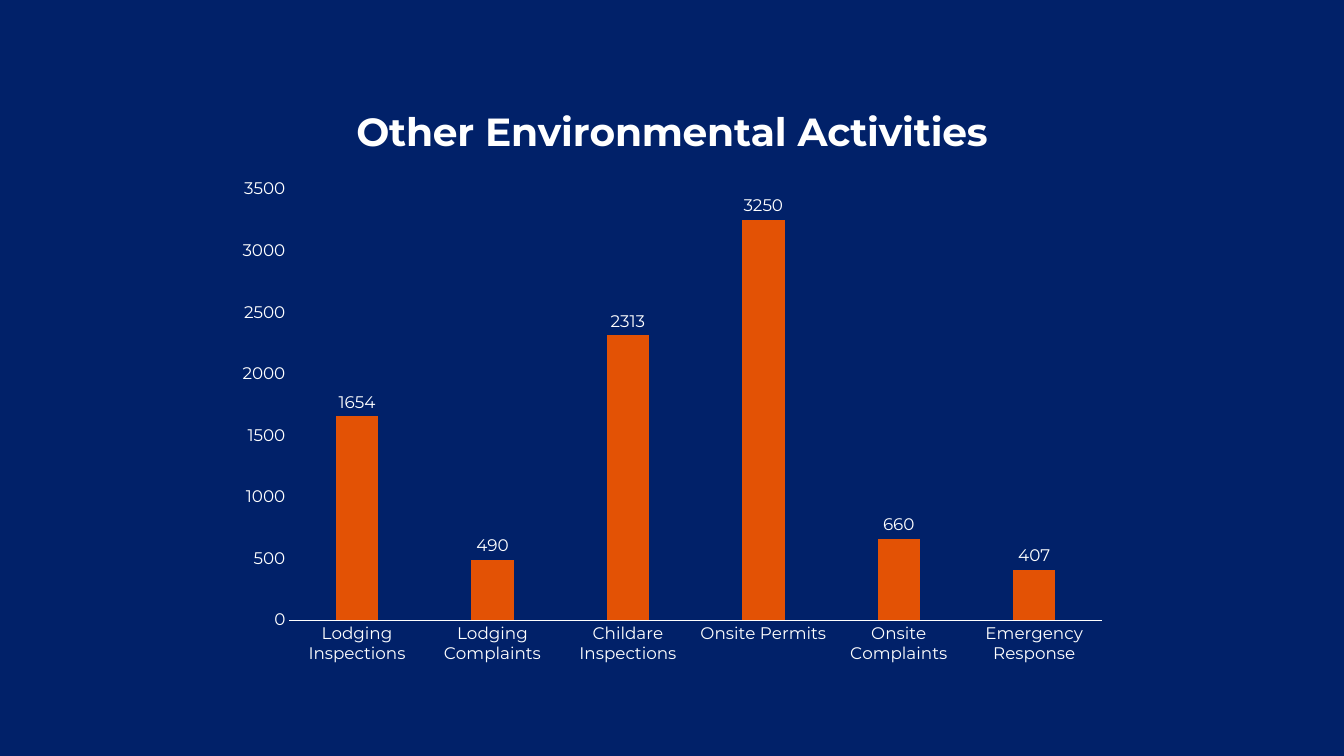
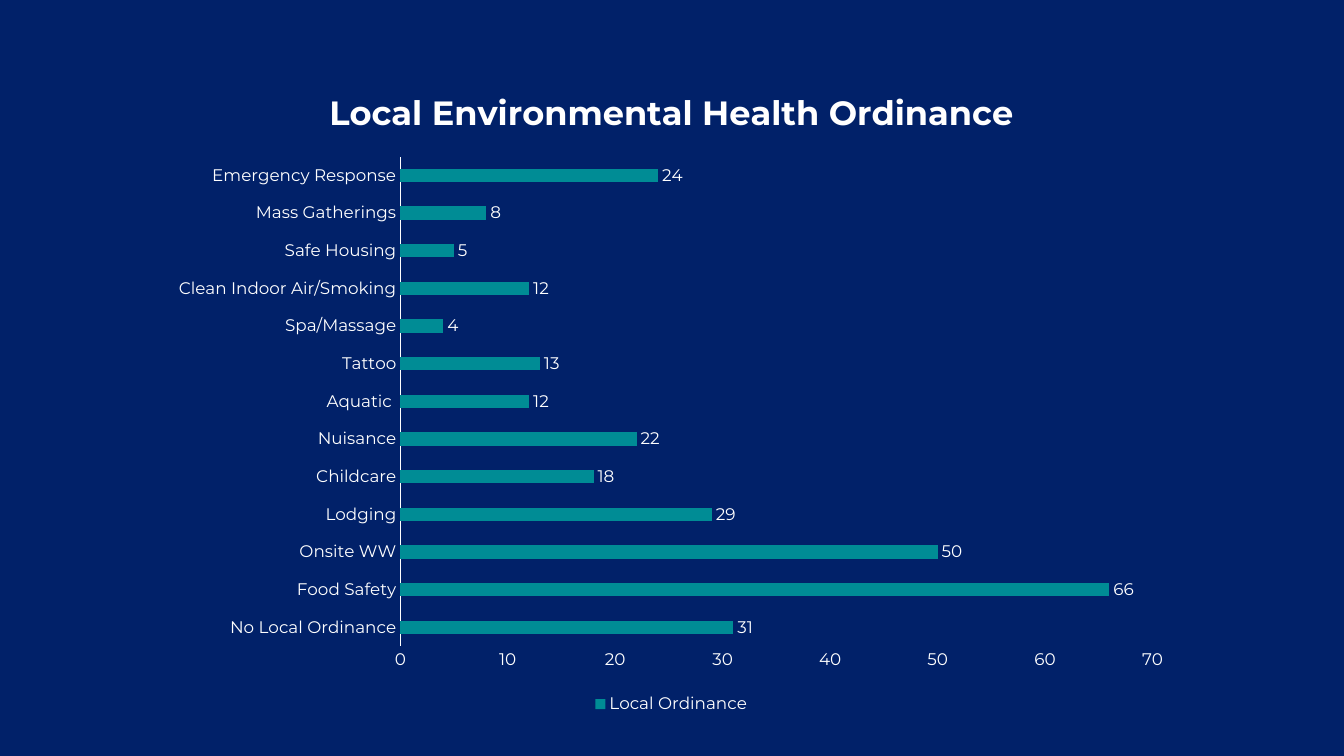
"""Build two slides of environmental health activity charts."""
import dataclasses

import lxml.etree
import pptx
import pptx.chart.data
import pptx.dml.color
import pptx.enum.chart
import pptx.oxml.ns
import pptx.util


@dataclasses.dataclass(frozen=True)
class Theme:
    navy: str = "012169"
    white: str = "FFFFFF"
    orange: str = "E35205"
    teal: str = "008C95"
    font: str = "Montserrat"
    label_size: int = 12
    axis_width: float = 0.75


def rgb(value):
    return pptx.dml.color.RGBColor.from_string(value)


def style_font(font, size, bold=False):
    values = {"name": theme.font, "size": pptx.util.Pt(size), "bold": bold}
    for attribute, value in values.items():
        setattr(font, attribute, value)
    font.color.rgb = rgb(theme.white)


theme = Theme()
chart_types = pptx.enum.chart.XL_CHART_TYPE
activities = {
    "Lodging Inspections": 1654,
    "Lodging Complaints": 490,
    "Childare Inspections": 2313,
    "Onsite Permits": 3250,
    "Onsite Complaints": 660,
    "Emergency Response": 407,
}
ordinances = {
    "No Local Ordinance": 31,
    "Food Safety": 66,
    "Onsite WW": 50,
    "Lodging": 29,
    "Childcare": 18,
    "Nuisance": 22,
    "Aquatic ": 12,
    "Tattoo": 13,
    "Spa/Massage": 4,
    "Clean Indoor Air/Smoking": 12,
    "Safe Housing": 5,
    "Mass Gatherings": 8,
    "Emergency Response": 24,
}
chart_slides = [
    {
        "title": "Other Environmental Activities", "title_size": 28,
        "kind": chart_types.COLUMN_CLUSTERED, "color": theme.orange,
        "frame": (160, 57, 640, 427),
        "plot_area": {"x": 0.073, "y": 0.183, "w": 0.907, "h": 0.721},
        "series": "Series 1", "counts": activities, "legend": False,
        "bars": {"gap_width": 219, "overlap": -27},
        "scale": {"minimum_scale": 0, "maximum_scale": 3500, "major_unit": 500},
    },
    {
        "title": "Local Environmental Health Ordinance", "title_size": 24,
        "kind": chart_types.BAR_CLUSTERED, "color": theme.teal,
        "frame": (113, 46, 733, 467),
        "plot_area": {"x": 0.236, "y": 0.141, "w": 0.733, "h": 0.749},
        "series": "Local Ordinance", "counts": ordinances, "legend": True,
        "bars": {"gap_width": 182, "overlap": 0},
        "scale": {"minimum_scale": 0, "maximum_scale": 70, "major_unit": 10},
    },
]

deck = pptx.Presentation()
deck.slide_width, deck.slide_height = pptx.util.Pt(960), pptx.util.Pt(540)
backdrop = deck.slide_master.background.fill
backdrop.solid()
backdrop.fore_color.rgb = rgb(theme.navy)

for content in chart_slides:
    slide = deck.slides.add_slide(deck.slide_layouts[6])
    data = pptx.chart.data.CategoryChartData()
    data.categories = list(content["counts"])
    data.add_series(content["series"], list(content["counts"].values()))
    frame = [pptx.util.Pt(length) for length in content["frame"]]
    chart = slide.shapes.add_chart(content["kind"], *frame, data).chart
    style_font(chart.font, theme.label_size)

    title = chart.chart_title.text_frame
    title.text = content["title"]
    style_font(title.paragraphs[0].runs[0].font, content["title_size"], bold=True)
    chart.chart_title.include_in_layout = False

    chart.has_legend = content["legend"]
    if content["legend"]:
        chart.legend.position = pptx.enum.chart.XL_LEGEND_POSITION.BOTTOM
        chart.legend.include_in_layout = False
        style_font(chart.legend.font, theme.label_size)

    for axis in (chart.category_axis, chart.value_axis):
        axis.has_major_gridlines = False
        axis.major_tick_mark = pptx.enum.chart.XL_TICK_MARK.NONE
        axis.minor_tick_mark = pptx.enum.chart.XL_TICK_MARK.NONE
        style_font(axis.tick_labels.font, theme.label_size)
    chart.category_axis.format.line.color.rgb = rgb(theme.white)
    chart.category_axis.format.line.width = pptx.util.Pt(theme.axis_width)
    chart.value_axis.format.line.fill.background()
    for attribute, value in content["scale"].items():
        setattr(chart.value_axis, attribute, value)

    bars = chart.plots[0]
    bars.vary_by_categories = False
    for attribute, value in content["bars"].items():
        setattr(bars, attribute, value)
    counts = bars.series[0]
    counts.invert_if_negative = False
    counts.format.fill.solid()
    counts.format.fill.fore_color.rgb = rgb(content["color"])
    counts.data_labels.show_value = True
    counts.data_labels.position = pptx.enum.chart.XL_LABEL_POSITION.OUTSIDE_END
    style_font(counts.data_labels.font, theme.label_size)

    qn = pptx.oxml.ns.qn
    plot_area = chart.element.find(".//" + qn("c:plotArea"))
    for automatic in plot_area.findall(qn("c:layout")):
        plot_area.remove(automatic)
    layout = lxml.etree.Element(qn("c:layout"))
    plot_area.insert(0, layout)
    manual = lxml.etree.SubElement(layout, qn("c:manualLayout"))
    settings = {"layoutTarget": "inner", "xMode": "edge", "yMode": "edge"}
    for tag, value in (settings | content["plot_area"]).items():
        lxml.etree.SubElement(manual, qn("c:" + tag), val=str(value))

deck.save("out.pptx")
